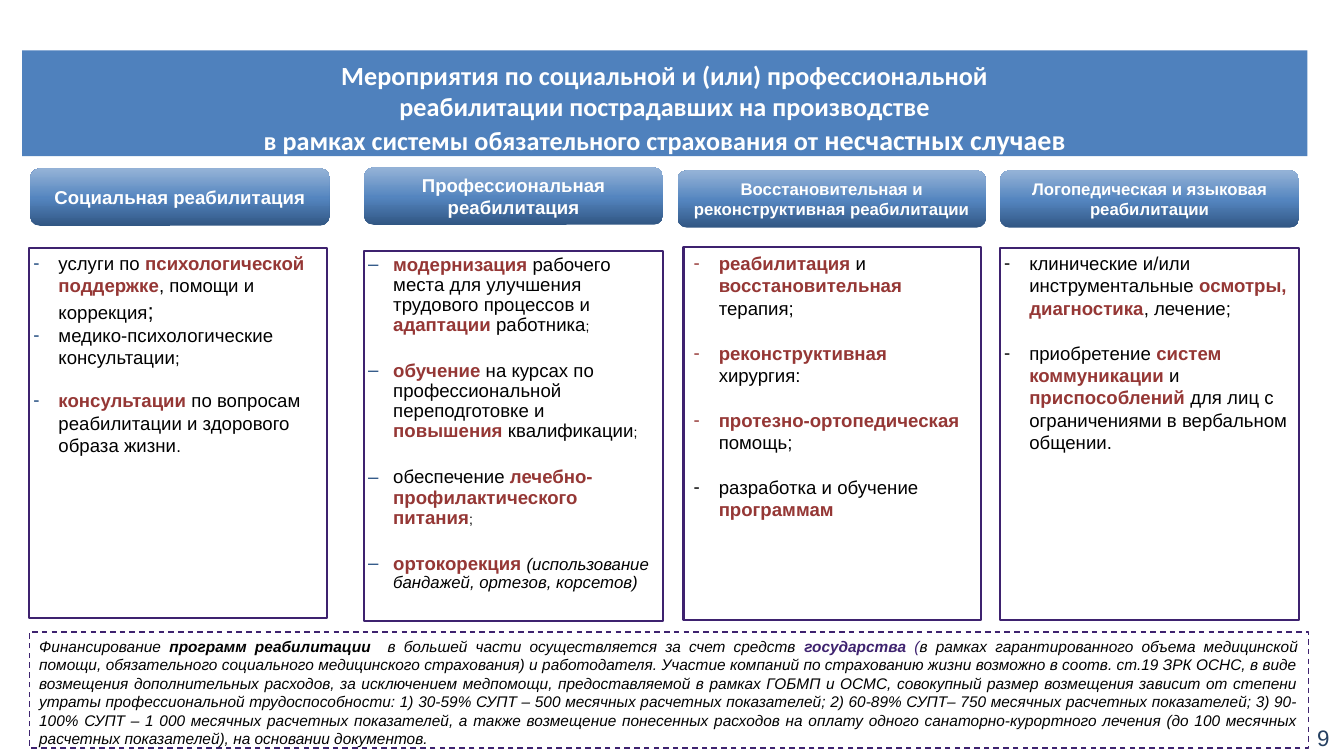
import copy

import pptx
import pptx.util
import pptx.dml.color
import pptx.enum.dml
import pptx.enum.shapes
import pptx.enum.text
import pptx.oxml.ns
from lxml import etree

Pt = pptx.util.Pt
ALIGN = pptx.enum.text.PP_ALIGN
ANCHOR = pptx.enum.text.MSO_ANCHOR
SHAPES = pptx.enum.shapes.MSO_SHAPE
qn = pptx.oxml.ns.qn

COLORS = {
    "banner": "4F81BD", "white": "FFFFFF", "black": "000000",
    "accent": "953735", "frame": "3E226F", "bullet": "1F497D", "number": "254061",
    "dark": "315683", "middle": "5485BF", "light": "95B3D7",
}


def rgb(name):
    return pptx.dml.color.RGBColor.from_string(COLORS[name])


def add_span(para, text, size, color="black", bold=False, italic=False, font="Arial"):
    span = para.add_run()
    span.text = text
    span.font.name, span.font.size = font, Pt(size)
    span.font.bold, span.font.italic = bold, italic
    span.font.color.rgb = rgb(color)


deck = pptx.Presentation()
deck.slide_width, deck.slide_height = Pt(960), Pt(540)
page = deck.slides.add_slide(deck.slide_layouts[4])  # title and four bodies

# Title banner
banner = page.shapes.title
banner.left, banner.top, banner.width, banner.height = Pt(15.8), Pt(36), Pt(918), Pt(75.6)
banner.fill.solid()
banner.fill.fore_color.rgb = rgb("banner")
frame = banner.text_frame
frame.auto_size = pptx.enum.text.MSO_AUTO_SIZE.NONE
frame.vertical_anchor = ANCHOR.MIDDLE
frame.margin_top, frame.margin_bottom = Pt(6), Pt(0)
title_lines = [
    [("Мероприятия по социальной и (или) профессиональной", 18.7)],
    [("реабилитации пострадавших на производстве", 18.7)],
    [("в рамках системы обязательного страхования от ", 18.7), ("несчастных случаев", 20)],
]
for index, line in enumerate(title_lines):
    para = frame.add_paragraph() if index else frame.paragraphs[0]
    para.alignment = ALIGN.CENTER
    para.space_before = Pt(0)
    for text, size in line:
        add_span(para, text, size, "white", bold=True, font="Calibri")

# Column headings: text, left, top, width, text size
headings = [
    ("Социальная реабилитация", 21.6, 120.3, 213.8, 13.3),
    ("Профессиональная реабилитация", 260, 119.6, 213.8, 13.3),
    ("Восстановительная и реконструктивная реабилитации", 484, 121.7, 220.3, 12),
    ("Логопедическая и языковая реабилитации", 714.3, 121.7, 213.8, 12),
]
for text, left, top, width, size in headings:
    heading = page.shapes.add_shape(
        SHAPES.ROUNDED_RECTANGLE, Pt(left), Pt(top), Pt(width), Pt(41))
    heading.shadow.inherit = False
    heading.line.fill.background()
    heading.fill.gradient()
    heading.fill.gradient_angle = 90
    stop_list = heading._element.spPr.find(".//" + qn("a:gsLst"))
    stop_list.append(copy.deepcopy(stop_list[0]))
    shades = [("dark", 0), ("middle", 0.48), ("light", 1)]
    for stop, (color, position) in zip(heading.fill.gradient_stops, shades):
        stop.color.rgb = rgb(color)
        stop.position = position
    heading.text_frame.word_wrap = True
    heading.text_frame.vertical_anchor = ANCHOR.MIDDLE
    para = heading.text_frame.paragraphs[0]
    para.alignment = ALIGN.CENTER
    add_span(para, text, size, "white", bold=True)

# Lists: *accented* text, closing text and its size, space before the item
columns = [
    dict(box=(20.9, 177.1, 212.4, 264.2), inset=2.9, mark="-", mark_color="bullet", items=[
        ("услуги по *психологической поддержке*, помощи и коррекция", ";", 16, 0),
        ("медико-психологические консультации", ";", 12, 0),
        ("*консультации *по вопросам реабилитации и здорового образа жизни", ".", 12, 15),
    ]),
    dict(box=(260, 179.3, 213.8, 264.2), inset=2.9, mark="–", mark_color="bullet", spacing=0.9,
         items=[
        ("*модернизация *рабочего места для улучшения трудового процессов и "
         "*адаптации* работника", ";", 10, 0),
        ("*обучение *на курсах по профессиональной переподготовке и "
         "*повышения* квалификации", ";", 10, 18.5),
        ("обеспечение *лечебно-профилактического питания*", ";", 10, 18.5),
        ("*ортокорекция *", "(использование бандажей, ортезов, корсетов)", 12, 18.5),
    ]),
    dict(box=(488.2, 176.4, 212.4, 266.4), inset=7.2, mark="-", items=[
        ("*реабилитация* и *восстановительная* терапия;", "", 0, 0),
        ("*реконструктивная *хирургия:", "", 0, 16),
        ("*протезно-ортопедическая* помощь;", "", 0, 16),
        ("разработка и обучение *программам*", "", 0, 16),
    ]),
    dict(box=(714.3, 177.1, 213.8, 265.7), inset=2.9, mark="-", items=[
        ("клинические и/или инструментальные *осмотры, диагностика*, лечение;", "", 0, 0),
        ("приобретение *систем коммуникации* и *приспособлений* для лиц "
         "с ограничениями в вербальном общении.", "", 0, 16),
    ]),
]
for number, column in enumerate(columns, start=1):
    box = page.placeholders[number]
    box.left, box.top, box.width, box.height = map(Pt, column["box"])
    box.line.color.rgb = rgb("frame")
    box.line.width = Pt(1.5)
    frame = box.text_frame
    frame.auto_size = pptx.enum.text.MSO_AUTO_SIZE.NONE
    frame.vertical_anchor = ANCHOR.TOP
    frame.margin_left = frame.margin_right = Pt(column["inset"])
    frame.margin_top = frame.margin_bottom = Pt(min(column["inset"], 3.6))
    for index, (text, closing, closing_size, gap) in enumerate(column["items"]):
        para = frame.add_paragraph() if index else frame.paragraphs[0]
        para.alignment = ALIGN.LEFT
        para.line_spacing = column.get("spacing", 1.0)
        para.space_before = Pt(gap)
        para.space_after = Pt(0)
        for part, words in enumerate(text.split("*")):
            accented = part % 2 == 1
            if words:
                add_span(para, words, 13.3, "accent" if accented else "black", bold=accented)
        if closing:
            add_span(para, closing, closing_size, italic=closing.startswith("("))
        properties = para._p.get_or_add_pPr()
        properties.set("marL", str(Pt(18)))
        properties.set("indent", str(-Pt(18)))
        if "mark_color" in column:
            mark_color = etree.SubElement(properties, qn("a:buClr"))
            etree.SubElement(mark_color, qn("a:srgbClr"), val=COLORS[column["mark_color"]])
        etree.SubElement(properties, qn("a:buFont"), typeface="Arial")
        etree.SubElement(properties, qn("a:buChar"), char=column["mark"])

# Funding note
note = page.shapes.add_shape(SHAPES.RECTANGLE, Pt(20.9), Pt(451.4), Pt(913.7), Pt(82.8))
note.shadow.inherit = False
note.fill.background()
note.line.color.rgb = rgb("frame")
note.line.width = Pt(1)
note.line.dash_style = pptx.enum.dml.MSO_LINE.DASH
note.text_frame.word_wrap = True
note.text_frame.vertical_anchor = ANCHOR.TOP
para = note.text_frame.paragraphs[0]
para.alignment = ALIGN.JUSTIFY
note_parts = [
    ("Финансирование ", "black", False),
    ("программ реабилитации", "black", True),
    ("  в большей части осуществляется за счет средств ", "black", False),
    ("государства ", "frame", True),
    ("(", "frame", False),
    ("в рамках гарантированного объема медицинской помощи, обязательного социального "
     "медицинского страхования) и работодателя. Участие компаний по страхованию жизни "
     "возможно в соотв. ст.19 ЗРК ОСНС, в виде возмещения дополнительных расходов, "
     "за исключением медпомощи, предоставляемой в рамках ГОБМП и ОСМС, совокупный размер "
     "возмещения зависит от степени утраты профессиональной трудоспособности: "
     "1) 30-59% СУПТ – 500 месячных расчетных показателей; "
     "2) 60-89% СУПТ– 750 месячных расчетных показателей; "
     "3) 90-100% СУПТ – 1 000 месячных расчетных показателей, а также возмещение "
     "понесенных расходов на оплату одного санаторно-курортного лечения "
     "(до 100 месячных расчетных показателей), на основании документов.", "black", False),
]
for text, color, bold in note_parts:
    add_span(para, text, 11, color, bold, italic=True)

# Page number
page_number = page.shapes.add_textbox(Pt(933.8), Pt(513.4), Pt(26), Pt(26.6))
add_span(page_number.text_frame.paragraphs[0], "9", 16, "number")

deck.save("out.pptx")
